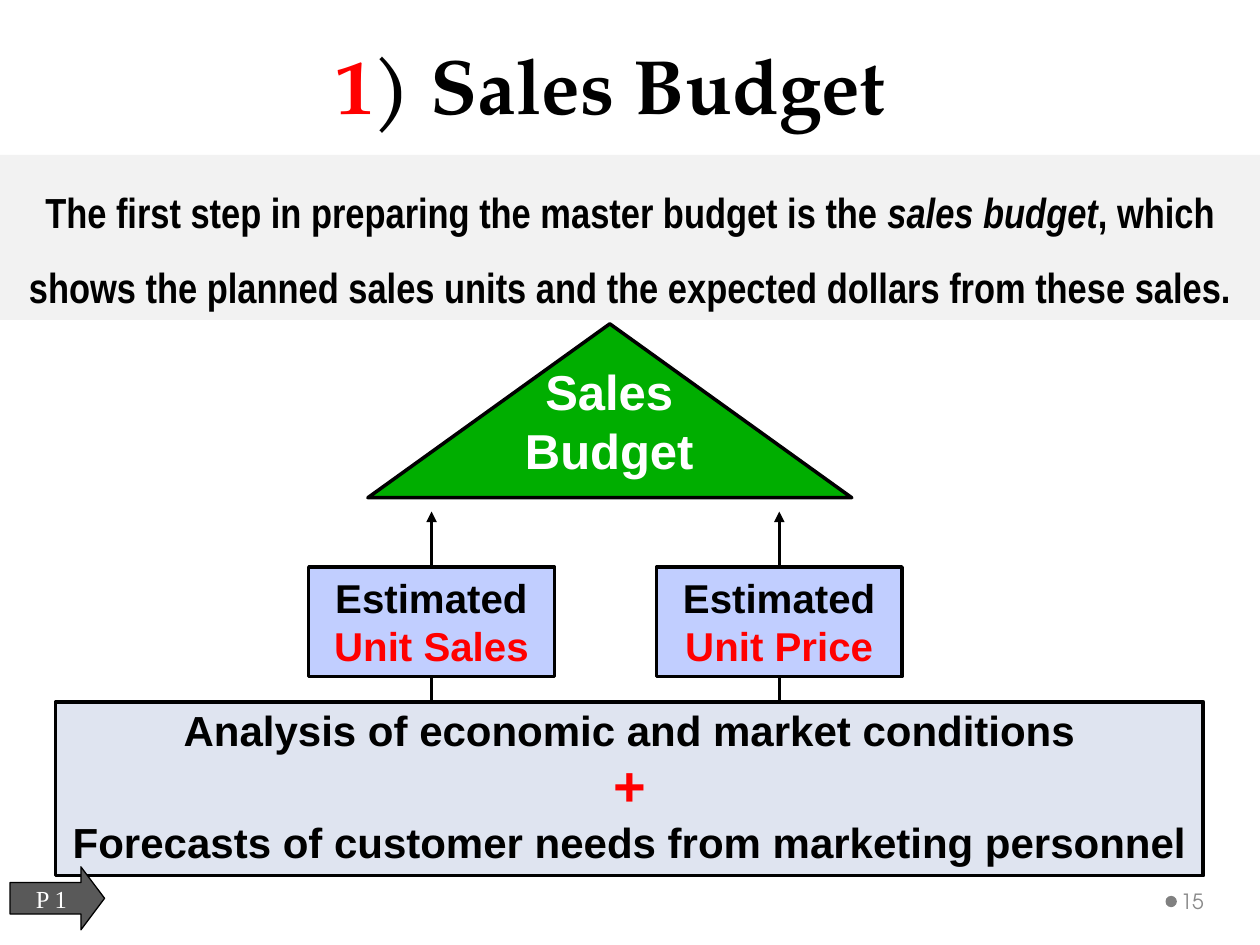
from lxml import etree
from pptx import Presentation
from pptx.dml.color import RGBColor
from pptx.enum.shapes import MSO_CONNECTOR, MSO_SHAPE
from pptx.enum.text import MSO_ANCHOR, PP_ALIGN
from pptx.oxml.ns import qn
from pptx.util import Inches, Pt

COLORS = {
    "black": "000000", "white": "FFFFFF", "red": "FF0000",
    "green": "00AE00", "periwinkle": "C1CEFF", "pale_blue": "DFE4F0",
    "banner": "F2F2F2", "dark_gray": "595959", "dot": "808080",
    "number": "898989",
}


def rgb(name):
    return RGBColor.from_string(COLORS[name])


def add_box(slide, kind, box, fill, line_width=None):
    """Add a filled preset shape, outlined in black if a width is given."""
    shape = slide.shapes.add_shape(kind, *map(Inches, box))
    shape.shadow.inherit = False
    shape.fill.solid()
    shape.fill.fore_color.rgb = rgb(fill)
    if line_width:
        shape.line.color.rgb = rgb("black")
        shape.line.width = Pt(line_width)
    else:
        shape.line.fill.background()
    return shape


def add_label(slide, box):
    return slide.shapes.add_textbox(*map(Inches, box))


def write(shape, runs, font, bold=True, anchor=MSO_ANCHOR.TOP,
          align=PP_ALIGN.CENTER, spacing=None, wrap=True):
    """Fill one paragraph from (text, size, color[, italic]) runs; a final newline breaks the line."""
    frame = shape.text_frame
    frame.word_wrap = wrap
    frame.vertical_anchor = anchor
    paragraph = frame.paragraphs[0]
    paragraph.alignment = align
    paragraph.line_spacing = spacing
    for text, size, color, *italic in runs:
        run = paragraph.add_run()
        run.text = text.rstrip("\n")
        run.font.name = font
        run.font.size = Pt(size)
        run.font.bold = bold
        run.font.italic = bool(italic and italic[0])
        run.font.color.rgb = rgb(color)
        if text.endswith("\n"):
            paragraph.add_line_break()


def add_up_arrow(slide, x, bottom, top):
    arrow = slide.shapes.add_connector(
        MSO_CONNECTOR.STRAIGHT, Inches(x), Inches(bottom), Inches(x), Inches(top))
    arrow.line.color.rgb = rgb("black")
    arrow.line.width = Pt(2)
    etree.SubElement(arrow.line._get_or_add_ln(), qn("a:tailEnd"), type="triangle")
    etree.SubElement(arrow._element.spPr, qn("a:effectLst"))


def add_budget_diagram(slide):
    estimates = [(2.45, "Unit Sales"), (5.21, "Unit Price")]
    width = 1.95
    for left, _ in estimates:
        for bottom, top in [(6.2, 5.26), (4.75, 4.06)]:
            add_up_arrow(slide, left + width / 2, bottom, top)

    add_box(slide, MSO_SHAPE.ISOSCELES_TRIANGLE, (2.92, 2.57, 3.84, 1.38), "green", 2)
    write(add_label(slide, (3.98, 2.82, 1.71, 1.04)),
          [("Sales\n", 28, "white"), ("Budget", 28, "white")], "Arial")

    for left, estimate in estimates:
        box = add_box(slide, MSO_SHAPE.RECTANGLE, (left, 4.5, width, 0.87), "periwinkle", 2)
        write(box, [("Estimated\n", 23, "black"), (estimate, 23, "red")], "Arial")

    basis = add_box(slide, MSO_SHAPE.RECTANGLE, (0.44, 5.57, 9.11, 1.38), "pale_blue", 2)
    write(basis, [
        ("Analysis of economic and market conditions\n", 24, "black"),
        ("+\n", 32, "red"),
        ("Forecasts of customer needs from marketing personnel", 24, "black"),
    ], "Arial", spacing=0.95)


def add_title(slide):
    write(add_label(slide, (0.18, 0, 9.33, 1.08)),
          [("1", 44, "red"), (") Sales Budget", 44, "black")],
          "TeX Gyre Pagella", anchor=MSO_ANCHOR.BOTTOM, spacing=Pt(58))


def add_banner(slide):
    banner = add_box(slide, MSO_SHAPE.RECTANGLE, (0, 1.23, 10, 1.31), "banner")
    write(banner, [
        ("The first step in preparing the master budget is the ", 24, "black"),
        ("sales budget", 24, "black", True),
        (", which shows the planned sales units and the expected dollars"
         " from these sales.", 24, "black"),
    ], "Arial Narrow", spacing=1.5)


def add_footer(slide):
    add_box(slide, MSO_SHAPE.OVAL, (9.25, 7.11, 0.09, 0.09), "dot")
    number = add_label(slide, (9.34, 6.95, 0.61, 0.4))
    number.text_frame.margin_left = Inches(0.03)
    number.text_frame.margin_right = Inches(0.05)
    write(number, [("15", 12, "number")], "TeX Gyre Adventor", bold=False,
          anchor=MSO_ANCHOR.MIDDLE, align=PP_ALIGN.LEFT)

    page_arrow = add_box(slide, MSO_SHAPE.RIGHT_ARROW, (0.08, 6.88, 0.75, 0.5),
                         "dark_gray", 0.75)
    page_arrow.adjustments[1] = 0.375
    write(page_arrow, [("P 1", 14, "white")], "Times New Roman", bold=False,
          anchor=MSO_ANCHOR.MIDDLE, wrap=False)


def main():
    presentation = Presentation()
    presentation.slide_width = Inches(10)
    presentation.slide_height = Inches(7.5)
    slide = presentation.slides.add_slide(presentation.slide_layouts[6])
    add_budget_diagram(slide)
    add_title(slide)
    add_footer(slide)
    add_banner(slide)
    presentation.save("out.pptx")


if __name__ == "__main__":
    main()
